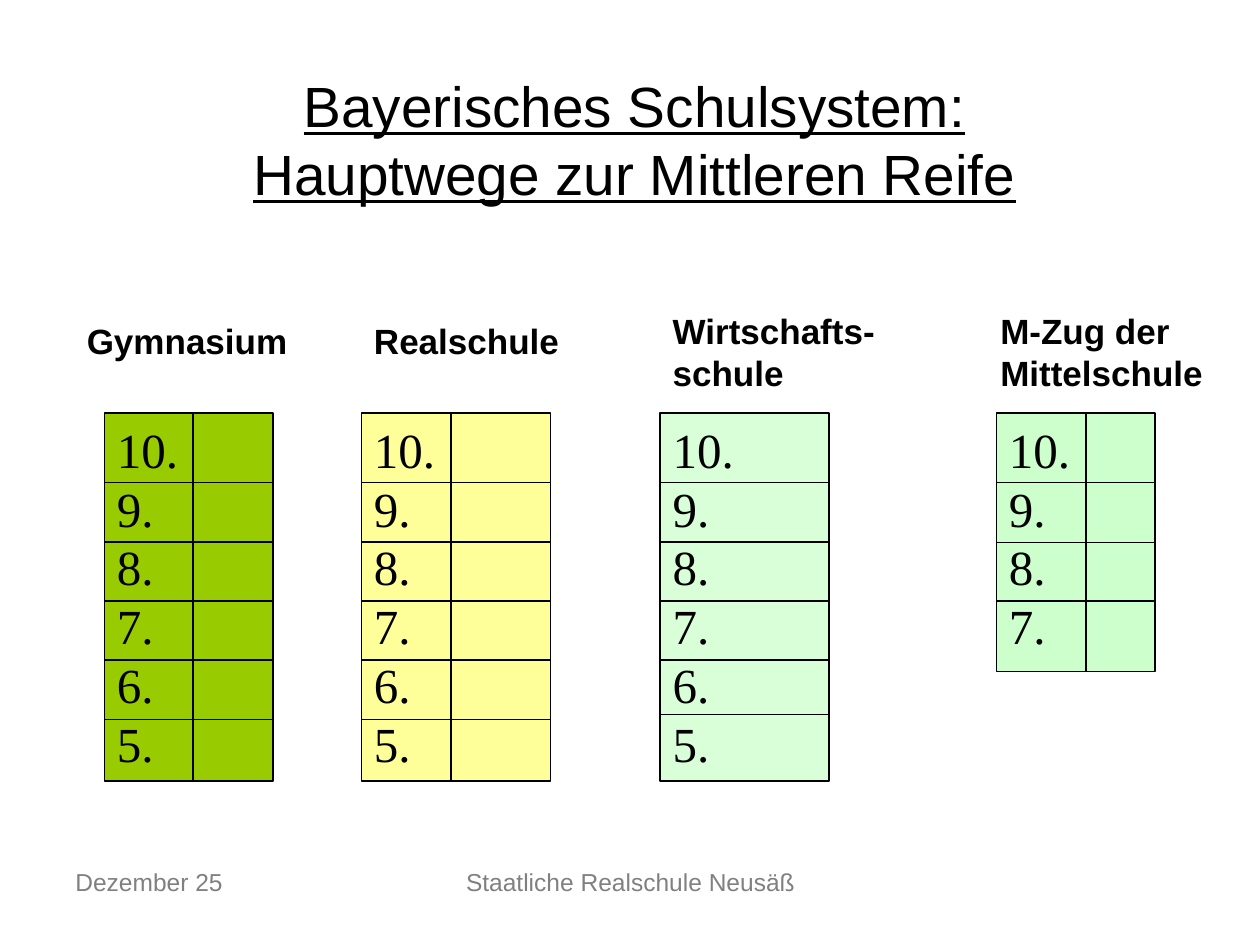
from dataclasses import dataclass
from typing import Optional

from lxml.etree import SubElement
from pptx import Presentation
from pptx.dml.color import RGBColor
from pptx.enum.shapes import MSO_CONNECTOR, MSO_SHAPE
from pptx.enum.text import MSO_ANCHOR, PP_ALIGN
from pptx.oxml.ns import qn
from pptx.util import Inches, Pt

BLACK = RGBColor(0x00, 0x00, 0x00)
GRAY = RGBColor(0x80, 0x80, 0x80)
GREEN = RGBColor(0x99, 0xCC, 0x00)
YELLOW = RGBColor(0xFF, 0xFF, 0x99)
MINT = RGBColor(0xD9, 0xFF, 0xD9)
LIGHT_GREEN = RGBColor(0xCC, 0xFF, 0xCC)

TOP = 3.28
FIRST_ROW = 3.83
ROW_STEP = 0.47
TOP_GRADE = 10


@dataclass
class School:
    name: str
    label_box: tuple[float, float, float, float]
    left: float
    width: float
    height: float
    lowest_grade: int
    fill: RGBColor
    divider: Optional[float] = None
    last_row: Optional[float] = None


SCHOOLS = [
    School("Gymnasium", (0.59, 2.49, 1.89, 0.43), 0.83, 1.34, 2.92, 5, GREEN, divider=1.53),
    School("Realschule", (2.87, 2.49, 1.73, 0.43), 2.87, 1.5, 2.92, 5, YELLOW, divider=3.58),
    School("Wirtschafts-schule", (5.24, 2.41, 1.97, 0.77), 5.24, 1.34, 2.92, 5, MINT,
           last_row=5.67),
    School("M-Zug der Mittelschule", (7.84, 2.41, 1.89, 0.77), 7.91, 1.26, 2.05, 7, LIGHT_GREEN,
           divider=8.62),
]


def write(sp, text: str, *, size: float, font: str = "Arial", color: RGBColor = BLACK,
          bold: bool = False, underline: bool = False, align=PP_ALIGN.LEFT,
          anchor=MSO_ANCHOR.TOP) -> None:
    tf = sp.text_frame
    tf.word_wrap = True
    tf.vertical_anchor = anchor
    tf.text = text
    for p in tf.paragraphs:
        p.alignment = align
        p.line_spacing = Pt(round(size * 1.2, 1))
        for r in p.runs:
            r.font.size = Pt(size)
            r.font.name = font
            r.font.bold = bold
            r.font.underline = underline
            r.font.color.rgb = color


def add_label(s, text: str, box: tuple[float, float, float, float], **text_format) -> None:
    write(s.shapes.add_textbox(*map(Inches, box)), text, **text_format)


def add_line(s, x1: float, y1: float, x2: float, y2: float):
    line = s.shapes.add_connector(MSO_CONNECTOR.STRAIGHT, *map(Inches, (x1, y1, x2, y2)))
    line.line.color.rgb = BLACK
    line.line.width = Pt(1)
    SubElement(line._element.spPr, qn("a:effectLst"))
    return line


def add_school(s, school: School) -> None:
    add_label(s, school.name, school.label_box, size=20, bold=True)
    sp = s.shapes.add_shape(MSO_SHAPE.RECTANGLE, Inches(school.left), Inches(TOP),
                            Inches(school.width), Inches(school.height))
    sp.shadow.inherit = False
    sp.fill.solid()
    sp.fill.fore_color.rgb = school.fill
    sp.line.color.rgb = BLACK
    sp.line.width = Pt(1)
    grades = range(TOP_GRADE, school.lowest_grade - 1, -1)
    write(sp, "\n".join(f"{grade}." for grade in grades), size=28, font="Times New Roman")

    rows = [FIRST_ROW + i * ROW_STEP for i in range(len(grades) - 1)]
    if school.last_row is not None:
        rows[-1] = school.last_row
    for y in rows:
        line = add_line(s, school.left, y, school.left + school.width, y)
        if abs(y - TOP - school.height / 2) < 0.01:
            line.begin_connect(sp, 1)
            line.end_connect(sp, 3)
    if school.divider is not None:
        add_line(s, school.divider, TOP, school.divider, TOP + school.height)


def main() -> None:
    prs = Presentation()
    prs.slide_width, prs.slide_height = Inches(10), Inches(7.5)
    s = prs.slides.add_slide(prs.slide_layouts[5])

    title = s.shapes.title
    title.left, title.top = Inches(0.59), Inches(0.5)
    title.width, title.height = Inches(8.89), Inches(1.2)
    write(title, "Bayerisches Schulsystem:\vHauptwege zur Mittleren Reife", size=32.4,
          underline=True, align=PP_ALIGN.CENTER, anchor=MSO_ANCHOR.MIDDLE)

    for school in SCHOOLS:
        add_school(s, school)

    add_label(s, "Dezember 25", (0.5, 6.83, 2.33, 0.52), size=14, color=GRAY)
    add_label(s, "Staatliche Realschule Neusäß", (3.42, 6.83, 3.17, 0.52), size=14,
              color=GRAY, align=PP_ALIGN.CENTER)
    prs.save("out.pptx")


if __name__ == "__main__":
    main()
